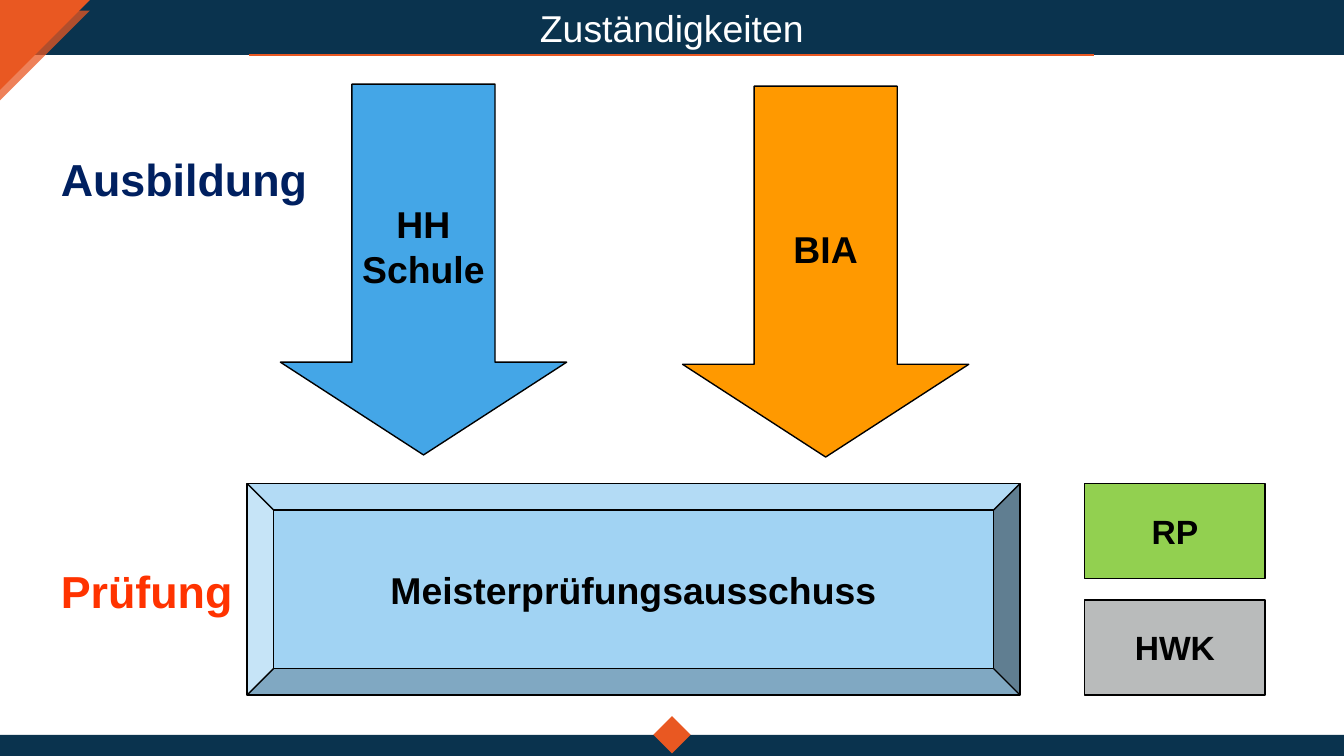
from lxml import etree
from pptx import Presentation
from pptx.dml.color import RGBColor
from pptx.enum.shapes import MSO_CONNECTOR, MSO_SHAPE
from pptx.enum.text import MSO_ANCHOR, MSO_AUTO_SIZE, PP_ALIGN
from pptx.oxml.ns import qn
from pptx.util import Cm, Pt

RECTANGLE, TRIANGLE = MSO_SHAPE.RECTANGLE, MSO_SHAPE.ISOSCELES_TRIANGLE
ARROW, BEVEL = MSO_SHAPE.DOWN_ARROW, MSO_SHAPE.BEVEL
STRAIGHT = MSO_CONNECTOR.STRAIGHT
TOP, MIDDLE = MSO_ANCHOR.TOP, MSO_ANCHOR.MIDDLE
LEFT, CENTER = PP_ALIGN.LEFT, PP_ALIGN.CENTER

FONT = "Arial"
COLORS = {
    "navy": "0A334E", "accent": "E95822", "white": "FFFFFF", "black": "000000",
    "training": "002060", "exam": "FF3300", "school": "44A6E7", "academy": "FF9900",
    "board": "A1D3F3", "council": "92D050", "chamber": "B9BBBB",
}

# All lengths in cm
WIDTH, HEIGHT = 25.4, 14.29
HEADER_HEIGHT, FOOTER_HEIGHT = 1.04, 0.4
CORNER, DIAMOND = 1.7, 0.5
ARROW_SIZE = (5.41, 7.01)
BOARD_TOP, BOARD_HEIGHT = 9.14, 4.0
OFFICE_LEFT, OFFICE_SIZE = 20.5, (3.41, 1.8)

TITLE = "Zuständigkeiten"
LABELS = [  # text, top, width, color
    ("Ausbildung", 2.74, 5.16, "training"),
    ("Prüfung", 10.54, 3.76, "exam"),
]
ARROWS = [  # lines, left, top, color
    (["HH", "Schule"], 5.3, 1.59, "school"),
    (["BIA"], 12.9, 1.63, "academy"),
]
BOARD = "Meisterprüfungsausschuss"
OFFICES = [("RP", "council"), ("HWK", "chamber")]


def rgb(name):
    return RGBColor.from_string(COLORS[name])


def write(shape, lines, size, color="black", bold=True, align=CENTER, anchor=MIDDLE, wrap=False):
    frame = shape.text_frame
    frame.word_wrap = wrap
    frame.vertical_anchor = anchor
    frame.text = "\n".join(lines)
    for para in frame.paragraphs:
        para.alignment = align
        para.font.name = FONT
        para.font.size = Pt(size)
        para.font.bold = bold
        para.font.color.rgb = rgb(color)


def add_text(slide, place, lines, size, **style):
    box = slide.shapes.add_textbox(*map(Cm, place))
    write(box, lines, size, **style)
    return box


def add_filled(slide, kind, place, color, outlined=False, rotation=0, adjustments=()):
    shape = slide.shapes.add_shape(kind, *map(Cm, place))
    shape.shadow.inherit = False
    shape.rotation = rotation
    for index, value in enumerate(adjustments):
        shape.adjustments[index] = value
    shape.fill.solid()
    shape.fill.fore_color.rgb = rgb(color)
    if outlined:
        shape.line.color.rgb = rgb("black")
        shape.line.width = Pt(0.75)
    else:
        shape.line.fill.background()
    return shape


def set_opacity(shape, percent):
    color = shape.fill._xPr.find(".//" + qn("a:srgbClr"))
    etree.SubElement(color, qn("a:alpha")).set("val", str(percent * 1000))


def add_frame(slide):
    """Header and footer bands with their accent ornaments."""
    footer_top = HEIGHT - FOOTER_HEIGHT
    add_filled(slide, RECTANGLE, (0, footer_top, WIDTH, FOOTER_HEIGHT), "navy")
    add_filled(slide, RECTANGLE,
               ((WIDTH - DIAMOND) / 2, footer_top - DIAMOND / 2, DIAMOND, DIAMOND),
               "accent", rotation=45)
    add_filled(slide, RECTANGLE, (0, 0, WIDTH, HEADER_HEIGHT), "navy")
    for top, opacity in [(0, 100), (0.2, 75)]:
        corner = add_filled(slide, TRIANGLE, (0, top, CORNER, CORNER), "accent",
                            rotation=90, adjustments=[0])
        if opacity < 100:
            set_opacity(corner, opacity)
    rule = slide.shapes.add_connector(
        STRAIGHT, Cm(4.7), Cm(HEADER_HEIGHT), Cm(20.68), Cm(HEADER_HEIGHT))
    rule.line.color.rgb = rgb("accent")
    rule.line.width = Pt(0.75)
    etree.SubElement(rule._element.spPr, qn("a:effectLst"))


def main():
    deck = Presentation()
    deck.slide_width, deck.slide_height = Cm(WIDTH), Cm(HEIGHT)
    slide = deck.slides.add_slide(deck.slide_layouts[6])

    add_frame(slide)
    add_text(slide, (2.7, 0, 20, HEADER_HEIGHT), [TITLE], 20,
             color="white", bold=False, wrap=True)

    for text, top, width, color in LABELS:
        label = add_text(slide, (0.9, top, width, 1.28), [text], 24,
                         color=color, align=LEFT, anchor=TOP)
        label.text_frame.auto_size = MSO_AUTO_SIZE.SHAPE_TO_FIT_TEXT

    for lines, left, top, color in ARROWS:
        arrow = add_filled(slide, ARROW, (left, top, *ARROW_SIZE), color,
                           outlined=True, adjustments=[0.5, 0.324])
        write(arrow, lines, 20)

    board = add_filled(slide, BEVEL, (4.67, BOARD_TOP, 14.61, BOARD_HEIGHT), "board",
                       outlined=True, adjustments=[0.125])
    write(board, [BOARD], 20)

    # The offices span the height of the board
    step = (BOARD_HEIGHT - OFFICE_SIZE[1]) / (len(OFFICES) - 1)
    for row, (name, color) in enumerate(OFFICES):
        office = add_filled(slide, RECTANGLE,
                            (OFFICE_LEFT, BOARD_TOP + row * step, *OFFICE_SIZE),
                            color, outlined=True)
        write(office, [name], 18)

    deck.save("out.pptx")


if __name__ == "__main__":
    main()
